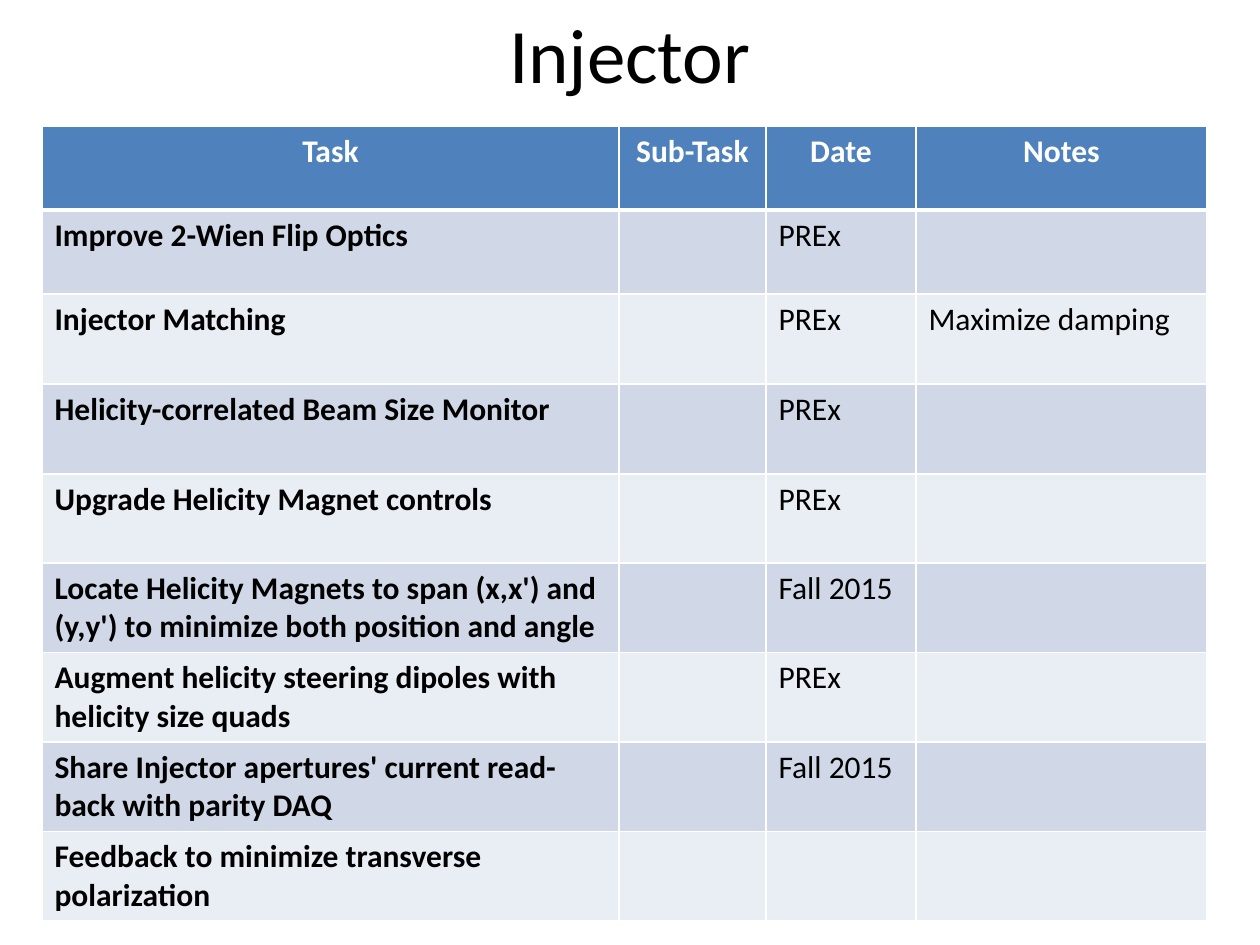
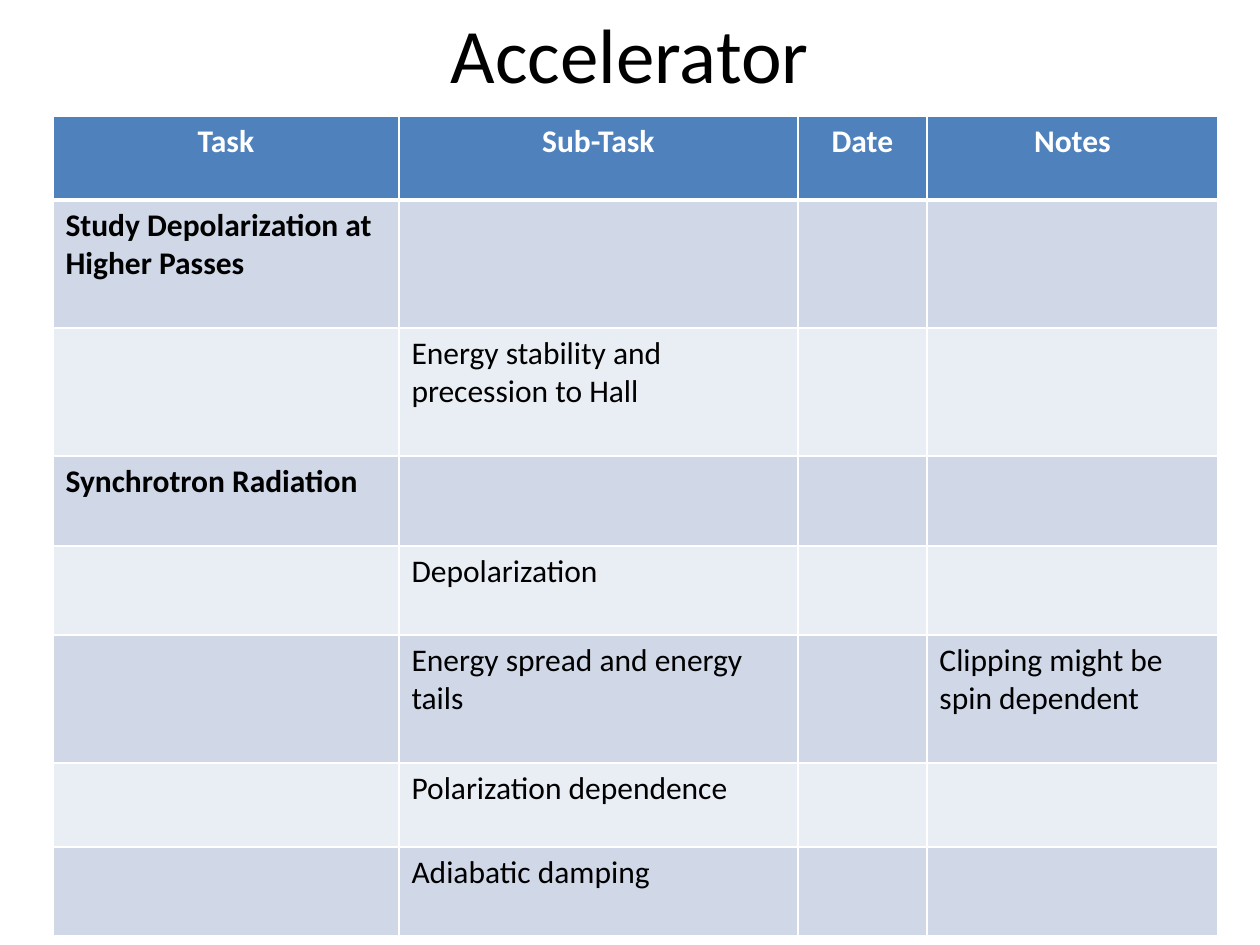
from dataclasses import dataclass

from lxml import etree
from pptx import Presentation
from pptx import util as u
from pptx.dml.color import RGBColor
from pptx.enum import text
from pptx.oxml import ns

EMU_PER_PX = 914400 / 126
TITLE_ONLY = 5
HEADERS = ("Task", "Sub-Task", "Date", "Notes")


@dataclass(frozen=True)
class Theme:
    """Colours, font and type sizes shared by all slides."""
    font: str = "Calibri"
    title_size: int = 44
    cell_size: int = 18
    ink: str = "000000"
    paper: str = "FFFFFF"
    header: str = "4F81BD"
    bands: tuple[str, str] = ("D0D8E8", "E9EDF4")
    rule: int = 1
    header_rule: int = 3


@dataclass(frozen=True)
class Row:
    """One line of the plan, with its height in px."""
    height: int
    task: str = ""
    subtask: str = ""
    date: str = ""
    notes: str = ""


@dataclass(frozen=True)
class Plan:
    """A titled task table placed in px."""
    title: str
    left: int
    top: int
    widths: tuple[int, ...]
    rows: tuple[Row, ...]


THEME = Theme()
HEADER_ROW = Row(84, *HEADERS)

PLANS = (
    Plan("Injector", 42, 126, (577, 147, 150, 291), (
        Row(84, "Improve 2-Wien Flip Optics", date="PREx"),
        Row(90, "Injector Matching", date="PREx", notes="Maximize damping"),
        Row(90, "Helicity-correlated Beam Size Monitor", date="PREx"),
        Row(89, "Upgrade Helicity Magnet controls", date="PREx"),
        Row(89, "Locate Helicity Magnets to span (x,x') and (y,y') "
                "to minimize both position and angle", date="Fall 2015"),
        Row(89, "Augment helicity steering dipoles with helicity size quads",
            date="PREx"),
        Row(89, "Share Injector apertures' current read-back with parity DAQ",
            date="Fall 2015"),
        Row(89, "Feedback to minimize transverse polarization"),
    )),
    Plan("Accelerator", 53, 116, (346, 399, 129, 291), (
        Row(128, "Study Depolarization at Higher Passes"),
        Row(128, subtask="Energy stability and precession to Hall"),
        Row(90, "Synchrotron Radiation"),
        Row(89, subtask="Depolarization"),
        Row(128, subtask="Energy spread and energy tails",
            notes="Clipping might be spin dependent"),
        Row(84, subtask="Polarization dependence"),
        Row(89, subtask="Adiabatic damping"),
    )),
)


def px(n: int) -> u.Emu:
    """Turn px into EMU."""
    return u.Emu(round(n * EMU_PER_PX))


def style_paragraph(p, size: int, color: str, align) -> None:
    """Set the type of a whole paragraph."""
    p.alignment = align
    p.font.name = THEME.font
    p.font.size = u.Pt(size)
    p.font.color.rgb = RGBColor.from_string(color)


def add_title(s, title: str) -> None:
    """Fill and place the title placeholder."""
    sp = s.shapes.title
    sp.left, sp.top, sp.width, sp.height = map(px, (63, 0, 1134, 105))
    tf = sp.text_frame
    tf.text = title
    tf.vertical_anchor = text.MSO_ANCHOR.MIDDLE
    style_paragraph(tf.paragraphs[0], THEME.title_size, THEME.ink,
                    text.PP_ALIGN.CENTER)


def set_borders(cell, top: int, bottom: int) -> None:
    """Draw the four cell borders, with widths in points."""
    tc_pr = cell._tc.get_or_add_tcPr()
    widths = {"L": THEME.rule, "R": THEME.rule, "T": top, "B": bottom}
    for side, width in widths.items():
        ln = etree.SubElement(tc_pr, ns.qn(f"a:ln{side}"), w=str(u.Pt(width)))
        fill = etree.SubElement(ln, ns.qn("a:solidFill"))
        etree.SubElement(fill, ns.qn("a:srgbClr"), val=THEME.paper)


def fill_cell(cell, value: str, row: int, col: int) -> None:
    """Write and format one cell by its place in the table."""
    is_header = row == 0
    set_borders(cell, THEME.header_rule if row == 1 else THEME.rule,
                THEME.header_rule if is_header else THEME.rule)
    cell.fill.solid()
    cell.fill.fore_color.rgb = RGBColor.from_string(
        THEME.header if is_header else THEME.bands[(row - 1) % 2])
    p = cell.text_frame.paragraphs[0]
    style_paragraph(p, THEME.cell_size,
                    THEME.paper if is_header else THEME.ink,
                    text.PP_ALIGN.CENTER if is_header else text.PP_ALIGN.LEFT)
    if value:
        r = p.add_run()
        r.text = value
        r.font.bold = is_header or col == 0


def add_plan_table(s, plan: Plan) -> None:
    """Add the task table of a plan."""
    rows = (HEADER_ROW, *plan.rows)
    table = s.shapes.add_table(
        len(rows), len(HEADERS), px(plan.left), px(plan.top),
        px(sum(plan.widths)), px(sum(row.height for row in rows))).table
    for column, width in zip(table.columns, plan.widths):
        column.width = px(width)
    for i, row in enumerate(rows):
        table.rows[i].height = px(row.height)
        values = (row.task, row.subtask, row.date, row.notes)
        for j, value in enumerate(values):
            fill_cell(table.cell(i, j), value, i, j)


def main() -> None:
    """Build and save the presentation."""
    prs = Presentation()
    prs.slide_width, prs.slide_height = px(1260), px(945)
    for plan in PLANS:
        s = prs.slides.add_slide(prs.slide_layouts[TITLE_ONLY])
        add_title(s, plan.title)
        add_plan_table(s, plan)
    prs.save("out.pptx")


if __name__ == "__main__":
    main()
